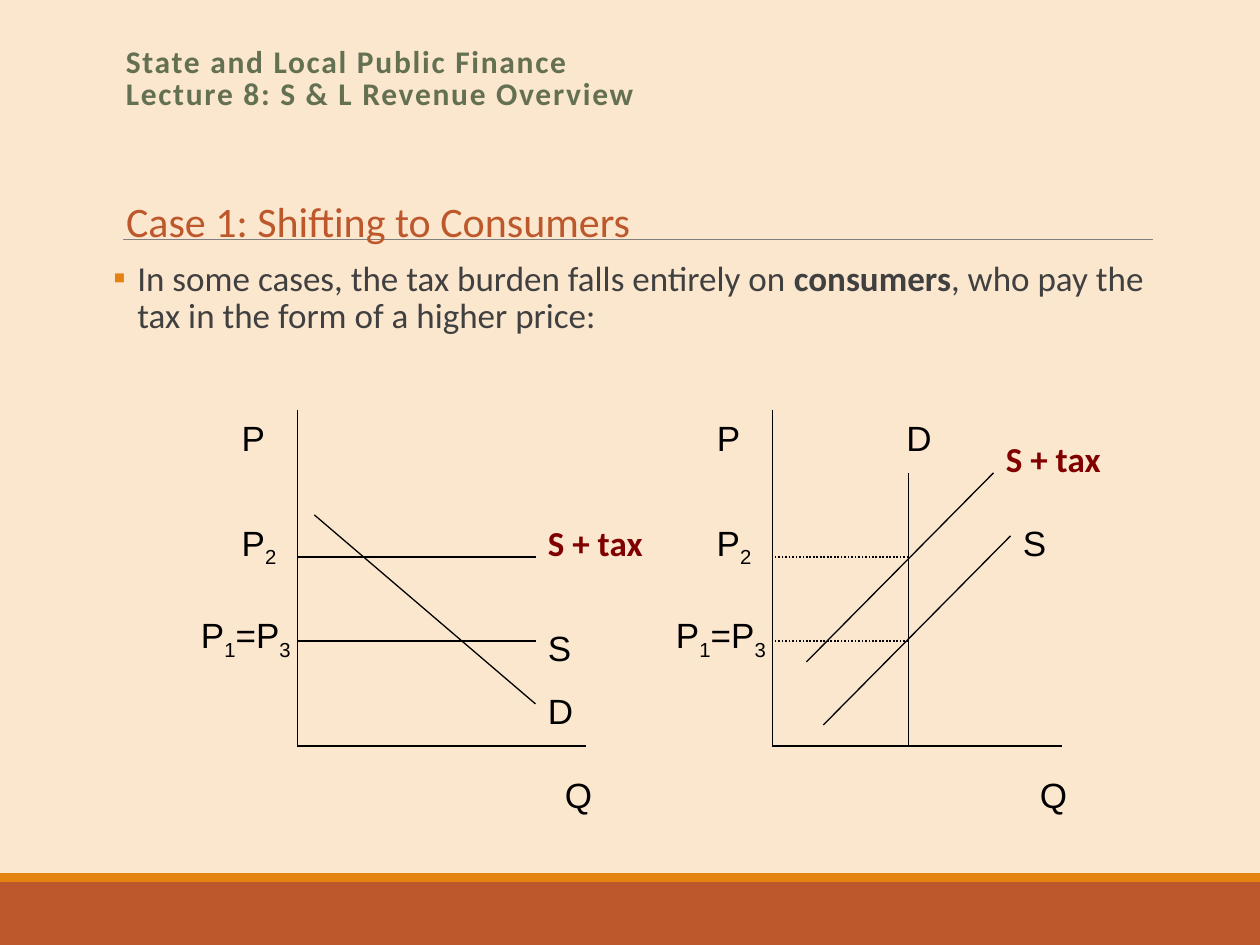
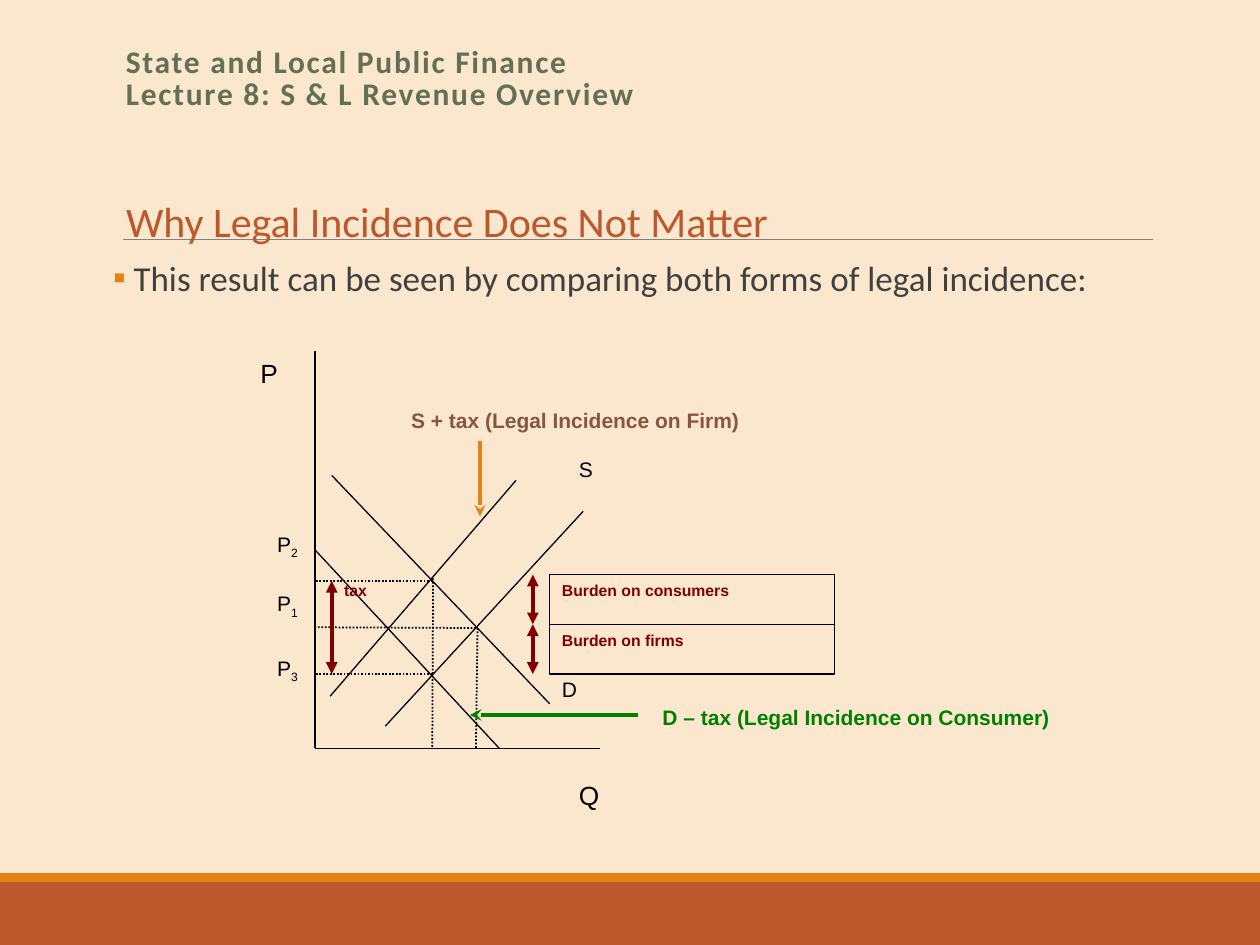
from collections import namedtuple
from dataclasses import dataclass
from itertools import groupby

from lxml import etree
from pptx import Presentation
from pptx.dml.color import RGBColor
from pptx.enum.dml import MSO_LINE
from pptx.enum.shapes import MSO_CONNECTOR, MSO_SHAPE
from pptx.enum.text import MSO_ANCHOR, MSO_AUTO_SIZE, PP_ALIGN
from pptx.oxml.ns import qn
from pptx.util import Inches, Pt

STRAIGHT = MSO_CONNECTOR.STRAIGHT
RECTANGLE = MSO_SHAPE.RECTANGLE
DOTTED = MSO_LINE.ROUND_DOT
TOP = MSO_ANCHOR.TOP
LEFT = PP_ALIGN.LEFT
NO_AUTOFIT = MSO_AUTO_SIZE.NONE


@dataclass(frozen=True)
class Theme:
    paper: RGBColor = RGBColor.from_string("FBE6CE")
    rust: RGBColor = RGBColor.from_string("BD582C")
    orange: RGBColor = RGBColor.from_string("E48312")
    rule: RGBColor = RGBColor.from_string("808080")
    course: RGBColor = RGBColor.from_string("637052")
    body: RGBColor = RGBColor.from_string("404040")
    ink: RGBColor = RGBColor.from_string("000000")
    maroon: RGBColor = RGBColor.from_string("800000")
    brown: RGBColor = RGBColor.from_string("865640")
    green: RGBColor = RGBColor.from_string("008000")
    text_font: str = "Calibri"
    graph_font: str = "Arial"
    title_size: int = 24
    body_size: int = 20
    course_size: int = 18
    axis_size: int = 15
    curve_size: int = 12
    note_size: int = 9
    thin: float = 0.75
    dotted: float = 1
    arrow: float = 2.25


THEME = Theme()
MARGIN, TEXT_WIDTH = 0.9, 8.25

# A graph counts columns right of and rows above its origin, in inches.
Graph = namedtuple("Graph", "shapes left base column row")


def draw_line(graph, start, end, color=THEME.ink, width=THEME.thin,
              dash=None, head=None, tail=None):
    (x1, y1), (x2, y2) = [
        (Inches(graph.left + column * graph.column),
         Inches(graph.base - row * graph.row)) for column, row in (start, end)]
    line = graph.shapes.add_connector(STRAIGHT, x1, y1, x2, y2)
    line.line.color.rgb = color
    line.line.width = Pt(width)
    if dash:
        line.line.dash_style = dash
    properties = line.element.spPr
    outline = properties.find(qn("a:ln"))
    for tag, arrowhead in (("a:headEnd", head), ("a:tailEnd", tail)):
        if arrowhead:
            etree.SubElement(outline, qn(tag), type=arrowhead)
    etree.SubElement(properties, qn("a:effectLst"))
    return line


def write_label(graph, text, column, row, columns, rows, size,
                color=THEME.ink, bold=False, font=THEME.graph_font, boxed=False):
    """Write text from its top left grid point, with digits as subscripts."""
    area = (Inches(graph.left + column * graph.column),
            Inches(graph.base - row * graph.row),
            Inches(columns * graph.column), Inches(rows * graph.row))
    if boxed:
        label = graph.shapes.add_shape(RECTANGLE, *area)
        label.shadow.inherit = False
        label.fill.solid()
        label.fill.fore_color.rgb = THEME.paper
        label.line.color.rgb = THEME.ink
        label.line.width = Pt(THEME.thin)
    else:
        label = graph.shapes.add_textbox(*area)
    frame = label.text_frame
    frame.word_wrap = True
    frame.vertical_anchor = TOP
    paragraph = frame.paragraphs[0]
    paragraph.alignment = LEFT
    for subscript, letters in groupby(text, str.isdigit):
        run = paragraph.add_run()
        run.text = "".join(letters)
        run.font.name = font
        run.font.size = Pt(size)
        run.font.bold = bold
        run.font.color.rgb = color
        if subscript:
            run.font._element.set("baseline", "-25000")


prs = Presentation()
prs.slide_width, prs.slide_height = Inches(10), Inches(7.5)
layout = prs.slide_layouts[1]
layout.background.fill.solid()
layout.background.fill.fore_color.rgb = THEME.paper

# Title, title width, bullet with *bold* words, bullet indent
TOPICS = [
    ("Case 1: Shifting to Consumers", 4.33,
     "In some cases, the tax burden falls entirely on *consumers*, "
     "who pay the tax in the form of a higher price:", 0.19),
    ("Why Legal Incidence Does Not Matter", 5.46,
     "This result can be seen by comparing both forms of legal incidence:", 0.16),
]
slides = []
for topic, topic_width, bullet, indent in TOPICS:
    slide = prs.slides.add_slide(layout)
    slides.append(slide)

    title, body = slide.placeholders
    course = slide.shapes.add_textbox(
        Inches(MARGIN), Inches(0.33), Inches(TEXT_WIDTH), Inches(0.65))
    title.left, title.top = Inches(MARGIN), Inches(1.5)
    title.width, title.height = Inches(topic_width), Inches(0.5)
    body.left, body.top = Inches(MARGIN), Inches(2.02)
    body.width, body.height = Inches(TEXT_WIDTH), Inches(4.4)

    title.text_frame.text = topic
    course.text_frame.text = (
        "State and Local Public Finance\vLecture 8: S & L Revenue Overview")
    point = body.text_frame.paragraphs[0]
    for number, words in enumerate(bullet.split("*")):
        run = point.add_run()
        run.text = words
        run.font.bold = number % 2 == 1

    for holder, size, color in ((title, THEME.title_size, THEME.rust),
                                (course, THEME.course_size, THEME.course),
                                (body, THEME.body_size, THEME.body)):
        frame = holder.text_frame
        frame.word_wrap = True
        frame.auto_size = NO_AUTOFIT
        frame.vertical_anchor = TOP
        frame.paragraphs[0].alignment = LEFT
        for run in frame.paragraphs[0].runs:
            run.font.name = THEME.text_font
            run.font.size = Pt(size)
            run.font.color.rgb = color

    course.text_frame.paragraphs[0].line_spacing = 0.85
    for run in course.text_frame.paragraphs[0].runs:
        run.font.bold = True
        run.font._element.set("spc", "100")

    body.text_frame.margin_left = body.text_frame.margin_right = 0
    point.line_spacing = 0.9
    point.space_before, point.space_after = Pt(6.8), Pt(1.1)
    marker = point._p.get_or_add_pPr()
    marker.set("marL", str(Inches(indent)))
    marker.set("indent", str(-Inches(indent)))
    bullet_color = etree.SubElement(marker, qn("a:buClr"))
    etree.SubElement(bullet_color, qn("a:srgbClr"), val=str(THEME.orange))
    etree.SubElement(marker, qn("a:buFont"), typeface=THEME.text_font)
    etree.SubElement(marker, qn("a:buChar"), char="▪")

shifting, incidence = slides

# Bands and title rule are drawn once and moved to the layout.
for top, height, color in ((7, 0.5, THEME.rust), (6.93, 0.07, THEME.orange)):
    band = shifting.shapes.add_shape(
        RECTANGLE, 0, Inches(top), prs.slide_width, Inches(height))
    band.shadow.inherit = False
    band.fill.solid()
    band.fill.fore_color.rgb = color
    band.line.fill.background()
    layout.shapes.element.append(band.element)
page = Graph(shifting.shapes, 0, 0, 1, -1)
title_rule = draw_line(page, (0.98, 1.9), (9.15, 1.9), THEME.rule, 0.5)
layout.shapes.element.append(title_rule.element)

# Slide 1: flat supply on the left, upright demand on the right
panels = shifting.shapes.add_group_shape().shapes
flat_supply, upright_demand = [
    Graph(panels, left, 5.92, 0.135, 1 / 6) for left in (2.36, 6.13)]

for graph in (flat_supply, upright_demand):
    draw_line(graph, (0, 16), (0, 0))
    draw_line(graph, (0, 0), (17, 0))
    for text, column, row, columns, rows in (
            ("P", -4, 16, 3, 4), ("Q", 15, -1, 3, 4),
            ("P2", -4, 11, 4, 3), ("P1=P3", -6.4, 6.6, 8, 3)):
        write_label(graph, text, column, row, columns, rows, THEME.body_size)

for price in (5, 9):
    draw_line(flat_supply, (0, price), (14, price))
    draw_line(upright_demand, (8, price), (0, price),
              width=THEME.dotted, dash=DOTTED)
draw_line(flat_supply, (1, 11), (14, 2))
draw_line(upright_demand, (8, 13), (8, 0))
draw_line(upright_demand, (2, 4), (13, 13))
draw_line(upright_demand, (3, 1), (14, 10))

for graph, text, column, row in (
        (flat_supply, "S", 14, 6), (flat_supply, "D", 14, 3),
        (upright_demand, "S", 14, 11), (upright_demand, "D", 7.15, 16)):
    write_label(graph, text, column, row, 5, 3, THEME.body_size)
for graph, column, row in ((flat_supply, 14, 11), (upright_demand, 13, 15)):
    write_label(graph, "S + tax", column, row, 8, 3, THEME.body_size,
                THEME.maroon, True, THEME.text_font)

# Slide 2: both forms of legal incidence in one graph
market = Graph(incidence.shapes.add_group_shape().shapes, 2.5, 5.94, 0.133, 0.197)

for start, end in (
        ((0, 16), (0, 0)), ((0, 0), (17, 0)),        # axes
        ((1, 11), (14, 1.8)), ((0, 8), (11, 0)),     # D, D – tax
        ((0.9, 2.1), (12, 10.8)),                    # S + tax
        ((4.2, 0.9), (16, 9.55))):                   # S
    draw_line(market, start, end)
for start, end in (
        ((9.6, 4.85), (0, 4.88)), ((7, 6.75), (0, 6.75)), ((7, 3), (0, 3)),
        ((7.05, 6.85), (7, 0)), ((9.7, 4.85), (9.6, 0))):
    draw_line(market, start, end, width=THEME.dotted, dash=DOTTED)

for text, column, row in (("P", -4, 16), ("Q", 15, -1)):
    write_label(market, text, column, row, 3, 4, THEME.axis_size)
for text, column, row, columns in (
        ("S", 15, 12, 5), ("D", 14, 3.15, 5),
        ("P2", -3, 9, 4), ("P1", -3, 6.6, 4), ("P3", -3, 4, 4)):
    write_label(market, text, column, row, columns, 3, THEME.curve_size)
for text, column, row, columns, color in (
        ("S + tax (Legal Incidence on Firm)", 5, 14, 35.6, THEME.brown),
        ("D – tax (Legal Incidence on Consumer)", 20, 2, 28.6, THEME.green)):
    write_label(market, text, column, row, columns, 3,
                THEME.curve_size, color, True)

write_label(market, "tax", 1, 7, 4, 4, THEME.note_size, THEME.maroon, True)
for text, row in (("Burden on consumers", 7), ("Burden on firms", 5)):
    write_label(market, text, 14, row, 17, 2, THEME.note_size,
                THEME.maroon, True, boxed=True)
for column, high, low in ((1, 6.75, 3), (13, 7, 5), (13, 5, 3)):
    draw_line(market, (column, high), (column, low), THEME.maroon,
              THEME.arrow, head="triangle", tail="triangle")
for start, end, color in (
        ((19.25, 1.35), (9.25, 1.35), THEME.green),
        ((9.85, 12.4), (9.85, 9.35), THEME.orange)):
    draw_line(market, start, end, color, THEME.arrow, tail="stealth")

prs.save("out.pptx")
